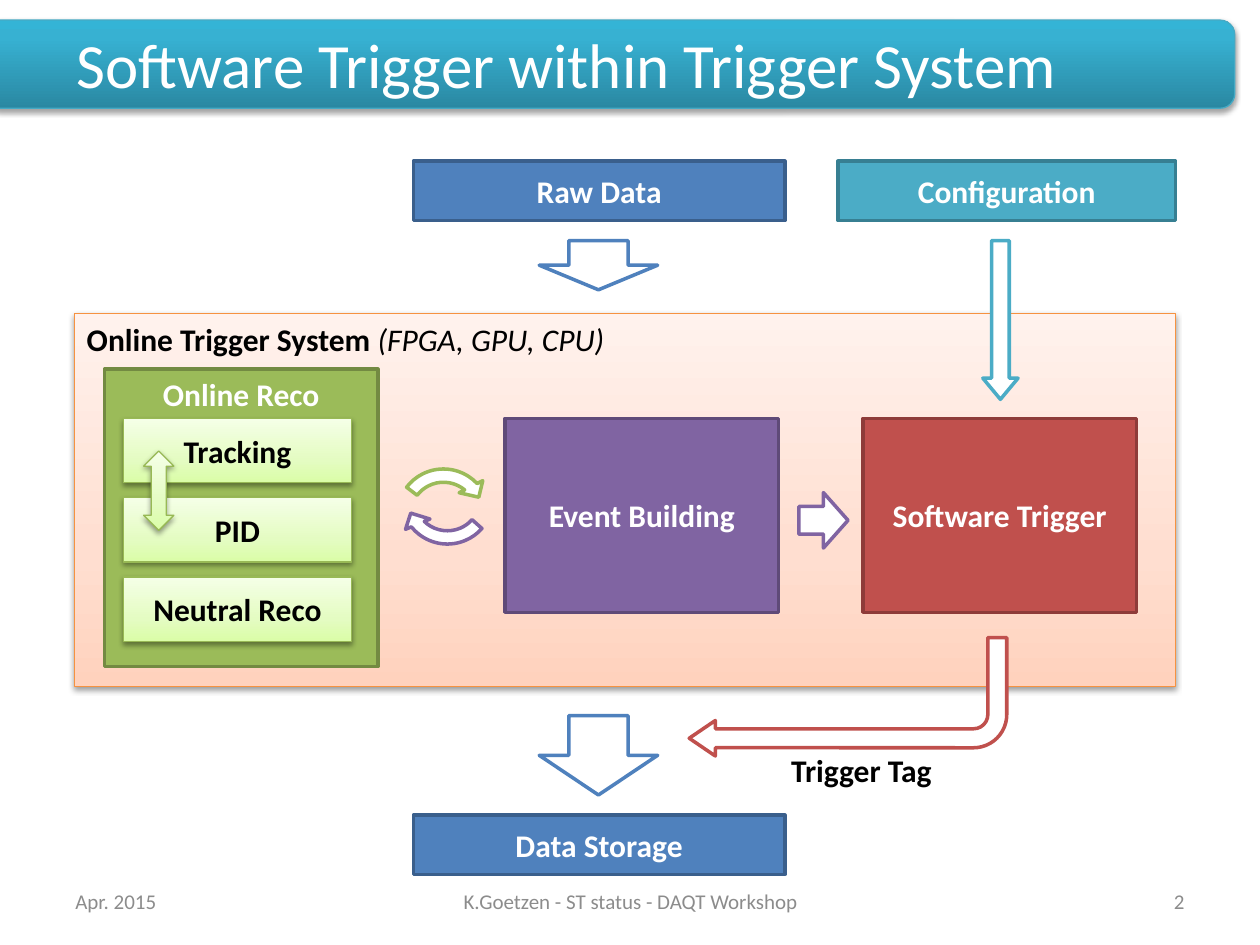
"""Build a slide showing the software trigger within the trigger system."""
import lxml.etree
import pptx
import pptx.dml.color
import pptx.enum.shapes
import pptx.enum.text
import pptx.oxml.ns
import pptx.util

COLORS = {
    "white": "FFFFFF", "black": "000000", "gray": "8C8C8C",
    "blue": "4F81BD", "blue_edge": "3A5F8C",
    "teal": "4BACC6", "teal_edge": "377F92", "title_edge": "46AAC5",
    "green": "9BBB59", "green_edge": "738A42", "module_edge": "98B955",
    "purple": "8064A2", "purple_edge": "5F4A78",
    "red": "C0504D", "red_edge": "8E3B39", "orange_edge": "F69240",
}
GRADIENTS = {
    "title": {0: "2A88A2", 80: "37B1D2", 100: "34B4D6"},
    "system": {0: "FFD2BD", 35: "FFDED0", 100: "FFF2ED"},
    "module": {0: "DAFDA7", 35: "E4FCC2", 100: "F5FFE7"},
}
SHADOW_ALPHA = {"title": 35000, "system": 38000, "module": 38000}
MSO = pptx.enum.shapes.MSO_SHAPE
ANCHOR = pptx.enum.text.MSO_ANCHOR
ALIGN = pptx.enum.text.PP_ALIGN
qn = pptx.oxml.ns.qn

prs = pptx.Presentation()
prs.slide_width = pptx.util.Inches(10)
prs.slide_height = pptx.util.Inches(7.5)
COL, ROW = prs.slide_width / 100, prs.slide_height / 75
s = prs.slides.add_slide(prs.slide_layouts[6])


def write(sp, runs, color, size=18, align=ALIGN.CENTER, anchor=ANCHOR.MIDDLE, wrap=True):
    tf = sp.text_frame
    tf.word_wrap, tf.vertical_anchor = wrap, anchor
    p = tf.paragraphs[0]
    p.alignment = align
    for text, style in runs:
        r = p.add_run()
        r.text = text
        for key, value in {"name": "Calibri", "size": pptx.util.Pt(size), **style}.items():
            setattr(r.font, key, value)
        r.font.color.rgb = pptx.dml.color.RGBColor.from_string(COLORS[color])


def draw(geom, x, y, w, h, fill, line, adj=(), rot=0):
    sp = s.shapes.add_shape(geom, *(round(v) for v in (x * COL, y * ROW, w * COL, h * ROW)))
    sp.rotation = rot
    sp.shadow.inherit = False
    for i, value in enumerate(adj):
        sp.adjustments[i] = value
    sp.line.color.rgb = pptx.dml.color.RGBColor.from_string(COLORS[line])
    sp.line.width = pptx.util.Pt(0.75 if fill in GRADIENTS else 2)
    if fill not in GRADIENTS:
        sp.fill.solid()
        sp.fill.fore_color.rgb = pptx.dml.color.RGBColor.from_string(COLORS[fill])
        return sp
    sp.fill.gradient()
    sp.fill.gradient_angle = 90
    stops = sp._element.spPr.find(".//" + qn("a:gsLst"))
    stops.clear()
    for pos, color in GRADIENTS[fill].items():
        gs = lxml.etree.SubElement(stops, qn("a:gs"), pos=str(pos * 1000))
        lxml.etree.SubElement(gs, qn("a:srgbClr"), val=color)
    shadow = lxml.etree.SubElement(
        sp._element.spPr.find(qn("a:effectLst")), qn("a:outerShdw"),
        blurRad=str(pptx.util.Pt(3.1)), dist=str(pptx.util.Pt(1.7)), dir="5400000", rotWithShape="0")
    clr = lxml.etree.SubElement(shadow, qn("a:srgbClr"), val=COLORS["black"])
    lxml.etree.SubElement(clr, qn("a:alpha"), val=str(SHADOW_ALPHA[fill]))
    return sp


BOLD = {"bold": True}
draw(MSO.ROUNDED_RECTANGLE, -1.2, 1.6, 99.2, 7, "title", "title_edge")
system = draw(MSO.RECTANGLE, 5.9, 24.9, 87.4, 29.6, "system", "orange_edge")
write(system, [("Online Trigger System ", BOLD), ("(FPGA, GPU, CPU)", {"italic": True})],
      "black", align=ALIGN.LEFT, anchor=ANCHOR.TOP)

boxes = [
    ("Raw Data", 32.8, 12.8, 29.5, 4.7, "blue", ANCHOR.MIDDLE),
    ("Configuration", 66.5, 12.8, 26.8, 4.7, "teal", ANCHOR.MIDDLE),
    ("Online Reco", 8.3, 29.3, 21.7, 23.6, "green", ANCHOR.TOP),
    ("Event Building", 40.1, 33.2, 21.7, 15.4, "purple", ANCHOR.MIDDLE),
    ("Software Trigger", 68.5, 33.2, 21.7, 15.4, "red", ANCHOR.MIDDLE),
    ("Data Storage", 32.8, 64.7, 29.5, 4.7, "blue", ANCHOR.MIDDLE),
]
for text, x, y, w, h, color, anchor in boxes:
    sp = draw(MSO.RECTANGLE, x, y, w, h, color, color + "_edge")
    write(sp, [(text, BOLD)], "white", anchor=anchor)

for i, text in enumerate(["Tracking", "PID", "Neutral Reco"]):
    sp = draw(MSO.RECTANGLE, 9.8, 33.2 + 6.3 * i, 18.1, 5.1, "module", "module_edge")
    write(sp, [(text, BOLD)], "black")

CYCLE = (0.125, 11.42, 204.58, 146.65, 0.125)
arrows = [
    (MSO.DOWN_ARROW, 42.8, 19.1, 9.4, 3.9, "blue", (), 0),
    (MSO.DOWN_ARROW, 42.8, 56.8, 9.4, 6.3, "blue", (), 0),
    (MSO.DOWN_ARROW, 78, 19.1, 2.8, 12.6, "teal", (0.5, 0.6), 0),
    (MSO.RIGHT_ARROW, 63.4, 39.1, 3.9, 4.4, "purple", (), 0),
    (MSO.BENT_ARROW, 54.7, 50.6, 25.2, 9.4, "red", (0.16, 0.15, 0.22, 0.28), 180),
    (MSO.CIRCULAR_ARROW, 31, 36.7, 8.4, 8.4, "green", CYCLE, 332.9),
    (MSO.CIRCULAR_ARROW, 31.3, 35.3, 8.4, 8.4, "purple", CYCLE, 157.2),
]
for geom, x, y, w, h, color, adj, rot in arrows:
    draw(geom, x, y, w, h, "white", color, adj, rot)
draw(MSO.UP_DOWN_ARROW, 11.4, 35.8, 2.4, 6.3, "module", "module_edge")

labels = [
    ("Software Trigger within Trigger System", 5.1, 2.3, 89.9, 5.4, "white", 36, ALIGN.LEFT, {}),
    ("Trigger Tag", 61.8, 59.1, 13.2, 4, "black", 18, ALIGN.LEFT, BOLD),
    ("Apr. 2015", 5, 69.5, 23.3, 4, "gray", 12, ALIGN.LEFT, {}),
    ("K.Goetzen - ST status - DAQT Workshop", 34.2, 69.5, 31.7, 4, "gray", 12, ALIGN.CENTER, {}),
    ("2", 71.7, 69.5, 23.3, 4, "gray", 12, ALIGN.RIGHT, {}),
]
for text, x, y, w, h, color, size, align, style in labels:
    sp = s.shapes.add_textbox(*(round(v) for v in (x * COL, y * ROW, w * COL, h * ROW)))
    write(sp, [(text, style)], color, size, align, wrap=text != "Trigger Tag")

prs.save("out.pptx")
